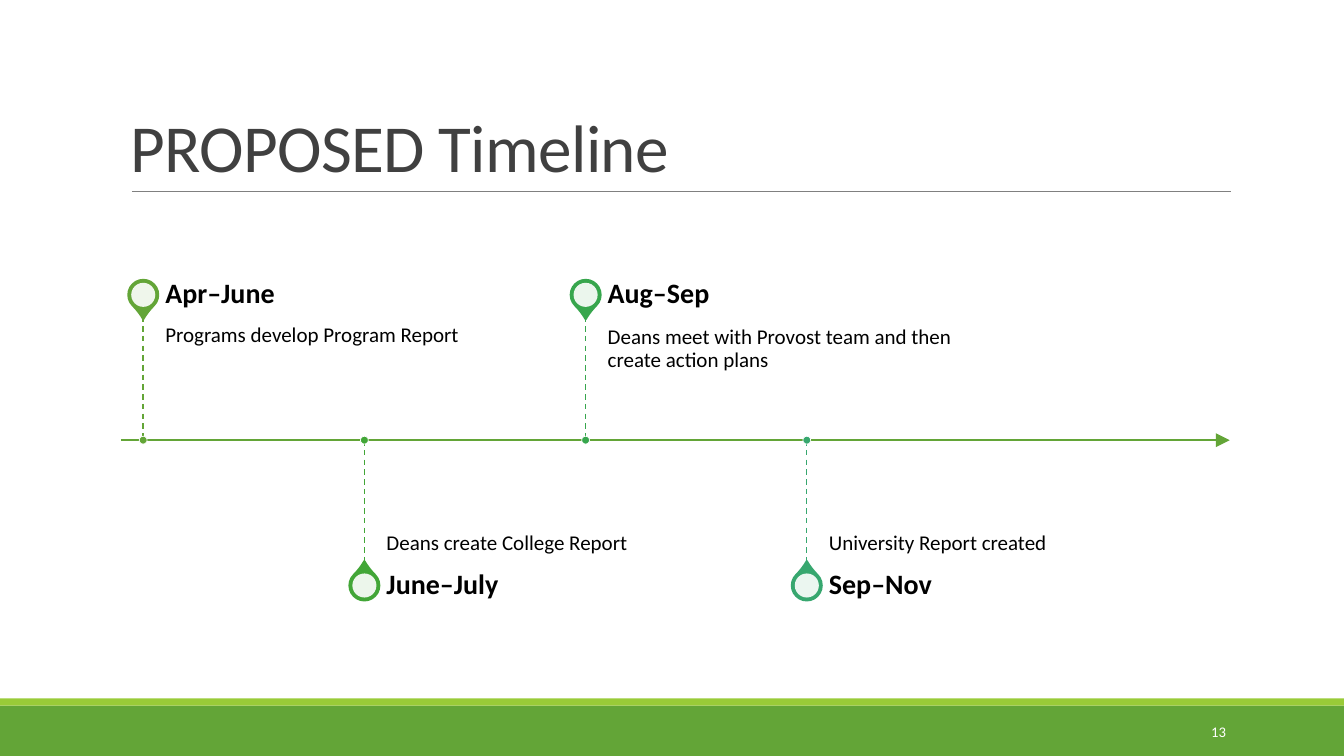
from pptx import Presentation
from pptx.dml.color import RGBColor
from pptx.enum.dml import MSO_LINE
from pptx.enum.shapes import MSO_CONNECTOR, MSO_SHAPE
from pptx.enum.text import MSO_ANCHOR, PP_ALIGN
from pptx.oxml.ns import qn
from pptx.util import Pt
from lxml.etree import SubElement

TITLE = "PROPOSED Timeline"
PAGE = "13"
STEPS = [
    ("Apr–June", "Programs develop Program Report", "63A537"),
    ("June–July", "Deans create College Report", "42A637"),
    ("Aug–Sep", "Deans meet with Provost team and then create action plans", "37A64D"),
    ("Sep–Nov", "University Report created", "37A76F"),
]
GREEN, LIME, WHITE, BLACK = "63A537", "99CB38", "FFFFFF", "000000"

WIDE, HIGH = 960, 540
AXIS = 314.4              # height of the time axis
FIRST, STEP = 102.3, 158  # first marker and gap between markers
STEM, REACH = 88.4, 103.8  # axis to pin tip, axis to pin centre
PIN, HOLE, DOT = 21.6, 17.2, 5.6
INDENT, TEXT_W, HEAD_H = 15.8, 263.5, 31


def color(code):
    return RGBColor.from_string(code)


def add_form(kind, left, top, width, height, fill, line=None, weight=1):
    form = slide.shapes.add_shape(kind, Pt(left), Pt(top), Pt(width), Pt(height))
    form.shadow.inherit = False
    form.fill.solid()
    form.fill.fore_color.rgb = color(fill)
    if line:
        form.line.color.rgb = color(line)
        form.line.width = Pt(weight)
    else:
        form.line.fill.background()
    return form


def add_round(kind, x, y, size, fill, line=None, weight=1):
    """Add a square-framed shape centred on x, y."""
    return add_form(kind, x - size / 2, y - size / 2, size, size, fill, line, weight)


def add_line(x1, y1, x2, y2, code, weight):
    line = slide.shapes.add_connector(
        MSO_CONNECTOR.STRAIGHT, Pt(x1), Pt(y1), Pt(x2), Pt(y2))
    line.line.color.rgb = color(code)
    line.line.width = Pt(weight)
    SubElement(line._element.spPr, qn("a:effectLst"))
    return line


def add_text(text, left, top, width, height, size, code, anchor,
             insets=(7.2, 3.6, 7.2, 3.6), spacing=0.9):
    box = slide.shapes.add_textbox(Pt(left), Pt(top), Pt(width), Pt(height))
    frame = box.text_frame
    frame.text = text
    frame.word_wrap = True
    frame.vertical_anchor = anchor
    (frame.margin_left, frame.margin_top,
     frame.margin_right, frame.margin_bottom) = map(Pt, insets)
    para = frame.paragraphs[0]
    para.line_spacing = spacing
    font = para.runs[0].font
    font.name, font.size = "Calibri", Pt(size)
    font.color.rgb = color(code)
    return para


def add_step(x, side, head, body, code):
    """Add one milestone; side is -1 above the axis and 1 below it."""
    above = side < 0
    pin_y = AXIS + side * REACH
    pin = add_round(MSO_SHAPE.TEAR, x, pin_y, PIN, code, code, 1.25)
    pin.adjustments[0] = 1.15
    pin.rotation = 135 if above else 315
    hole = add_round(MSO_SHAPE.OVAL, x, pin_y, HOLE, WHITE)
    tint = hole._element.spPr.find(qn("a:solidFill"))[0]
    SubElement(tint, qn("a:alpha"), val="90000")

    left = x + INDENT
    add_text(body, left, AXIS - STEM if above else AXIS, TEXT_W, STEM, 15, BLACK,
             MSO_ANCHOR.TOP if above else MSO_ANCHOR.BOTTOM,
             (0, 7.2, 7.2, 11.5) if above else (0, 11.5, 0, 7.2))
    title = add_text(head, left, pin_y - HEAD_H / 2, TEXT_W, HEAD_H, 20, BLACK,
                     MSO_ANCHOR.MIDDLE, (0, 0, 10, 0))
    title.runs[0].font.bold = True

    stem = add_line(x, AXIS + min(side, 0) * STEM, x, AXIS + max(side, 0) * STEM, code, 1)
    stem.line.dash_style = MSO_LINE.DASH
    add_round(MSO_SHAPE.OVAL, x, AXIS, DOT, code, WHITE, 0.5)


deck = Presentation()
deck.slide_width, deck.slide_height = Pt(WIDE), Pt(HIGH)
slide = deck.slides.add_slide(deck.slide_layouts[6])

add_form(MSO_SHAPE.RECTANGLE, 0, 504, WIDE, 36, GREEN)
add_form(MSO_SHAPE.RECTANGLE, 0, 498.8, WIDE, 5.2, LIME)
add_line(94.3, 136.8, 879, 136.8, "808080", 0.5)

title = add_text(TITLE, 86.4, 22.6, 792, 114.2, 48, "404040",
                 MSO_ANCHOR.BOTTOM, spacing=0.85)
title.runs[0].font._element.set("spc", "-50")
page = add_text(PAGE, 779.8, 508.3, 103, 28.8, 10.5, WHITE,
                MSO_ANCHOR.MIDDLE, spacing=1.0)
page.alignment = PP_ALIGN.RIGHT

axis = add_line(86.4, AXIS, 878.4, AXIS, GREEN, 1.5)
SubElement(axis.line._get_or_add_ln(), qn("a:tailEnd"), type="triangle", w="lg", len="lg")

for i, (head, body, code) in enumerate(STEPS):
    add_step(FIRST + i * STEP, 1 if i % 2 else -1, head, body, code)

deck.save("out.pptx")
